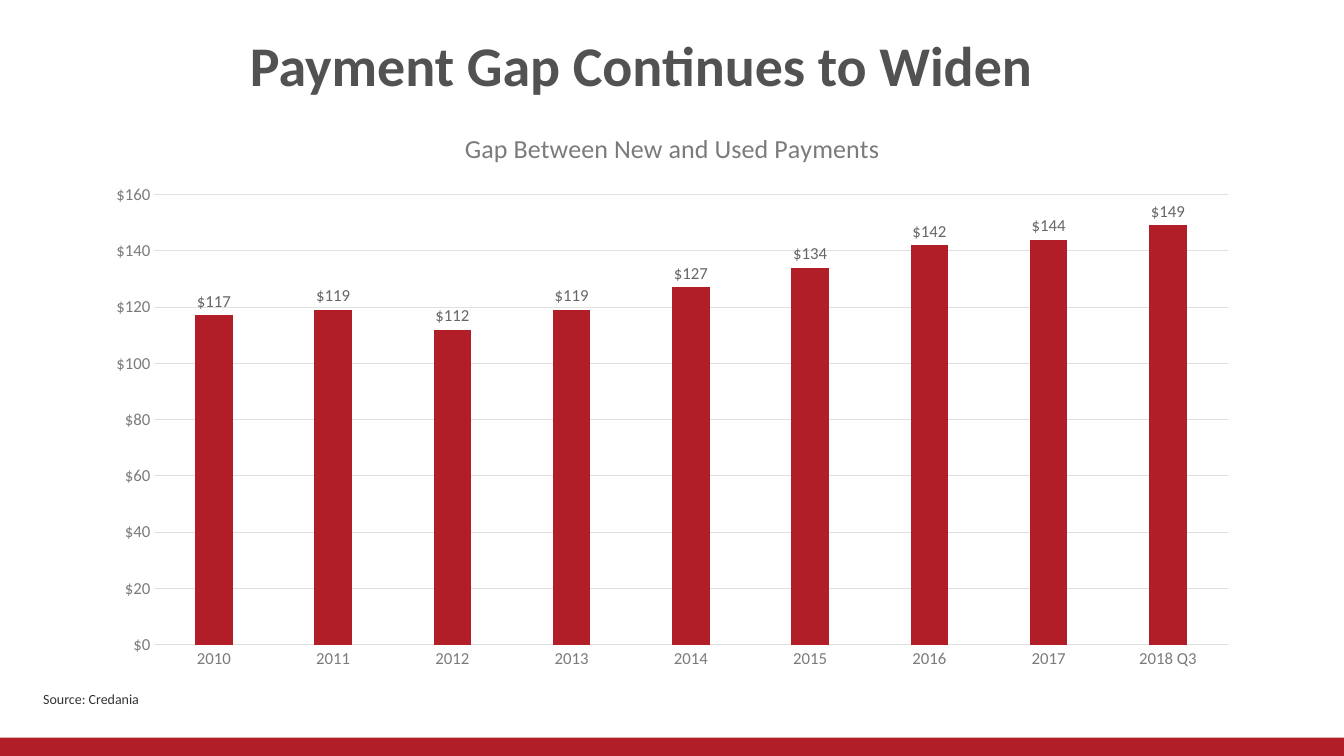
from pptx import Presentation
from pptx.chart.data import CategoryChartData as ChartData
from pptx.dml.color import RGBColor as RGB
from pptx.enum.chart import XL_CHART_TYPE as Kind, XL_LABEL_POSITION as Spot
from pptx.enum.chart import XL_TICK_MARK as Tick
from pptx.enum.shapes import MSO_SHAPE as Form
from pptx.enum.text import MSO_ANCHOR as Anchor, PP_ALIGN as Align
from pptx.oxml import parse_xml
from pptx.oxml.ns import nsdecls
from pptx.util import Cm, Pt

WIDTH, HEIGHT = 33.87, 19.05
RED, DARK, INK = "B21E28", "525252", "343333"
GREY, LABEL, GRID = "7C7A7A", "676565", "E1E0E0"
MONEY = '"$"#,##0'
HEADING = "Gap Between New and Used Payments"
GAPS = {"2010": 117, "2011": 119, "2012": 112, "2013": 119, "2014": 127,
        "2015": 134, "2016": 142, "2017": 144, "2018 Q3": 149}


def color(code):
    return RGB.from_string(code)


class Page:
    face = "Calibri"

    def __init__(self, deck):
        self.slide = deck.slides.add_slide(deck.slide_layouts[6])
        self.shapes = self.slide.shapes

    def style(self, font, size, code, bold=False):
        font.name, font.size, font.bold = self.face, Pt(size), bold
        font.color.rgb = color(code)

    def bar(self, box, code):
        shape = self.shapes.add_shape(Form.RECTANGLE, *map(Cm, box))
        shape.shadow.inherit = False
        shape.fill.solid()
        shape.fill.fore_color.rgb = color(code)
        shape.line.fill.background()

    def text(self, box, words, size, code, bold=False,
             align=Align.LEFT, anchor=Anchor.TOP):
        frame = self.shapes.add_textbox(*map(Cm, box)).text_frame
        frame.word_wrap = True
        frame.vertical_anchor = anchor
        para = frame.paragraphs[0]
        para.alignment = align
        run = para.add_run()
        run.text = words
        self.style(run.font, size, code, bold)

    def rule(self, line):
        line.color.rgb = color(GRID)
        line.width = Pt(0.75)

    def axis(self, axis):
        axis.major_tick_mark = axis.minor_tick_mark = Tick.NONE
        self.style(axis.tick_labels.font, 12, GREY)

    def place(self, chart, spots):
        area = chart._chartSpace.xpath("c:chart/c:plotArea")[0]
        for old in area.xpath("c:layout"):
            area.remove(old)
        parts = "".join(f'<c:{name} val="{val}"/>' for name, val in spots.items())
        area.insert(0, parse_xml(
            f'<c:layout {nsdecls("c")}><c:manualLayout>'
            '<c:layoutTarget val="inner"/><c:xMode val="edge"/><c:yMode val="edge"/>'
            f'{parts}</c:manualLayout></c:layout>'))

    def columns(self, box, heading, values):
        data = ChartData(number_format=MONEY)
        data.categories = list(values)
        data.add_series(heading, list(values.values()))
        chart = self.shapes.add_chart(
            Kind.COLUMN_CLUSTERED, *map(Cm, box), data).chart
        self.style(chart.font, 10, INK)
        chart.has_legend = False
        self.place(chart, {"x": 0.053, "y": 0.15, "w": 0.926, "h": 0.786})

        # Chart heading
        run = chart.chart_title.text_frame.paragraphs[0].add_run()
        run.text = heading
        self.style(run.font, 18.6, GREY)

        # Axes
        years, money = chart.category_axis, chart.value_axis
        self.axis(years)
        self.axis(money)
        self.rule(years.format.line)
        self.rule(money.major_gridlines.format.line)
        money.format.line.fill.background()
        money.minimum_scale, money.maximum_scale, money.major_unit = 0, 160, 20
        money.tick_labels.number_format = MONEY
        money.tick_labels.number_format_is_linked = False

        # Columns and their labels
        plot = chart.plots[0]
        plot.gap_width, plot.overlap = 219, -27
        plot.vary_by_categories = False
        series = plot.series[0]
        series.format.fill.solid()
        series.format.fill.fore_color.rgb = color(RED)
        labels = series.data_labels
        labels.show_value = True
        labels.position = Spot.OUTSIDE_END
        labels.number_format = MONEY
        labels.number_format_is_linked = False
        self.style(labels.font, 12, LABEL)


def main():
    deck = Presentation()
    deck.slide_width, deck.slide_height = Cm(WIDTH), Cm(HEIGHT)
    page = Page(deck)

    # Footer band
    page.bar((0, 18.59, WIDTH, 0.46), RED)

    # Title
    page.text((1.55, 0.53, 29.21, 2.18), "Payment Gap Continues to Widen",
              40, DARK, True, Align.CENTER, Anchor.MIDDLE)

    # Chart
    page.columns((2.34, 2.74, 29.21, 14.43), HEADING, GAPS)

    # Source line
    page.text((0.84, 17.27, 9.09, 0.69), "Source: Credania", 10, INK)

    deck.save("out.pptx")


if __name__ == "__main__":
    main()
